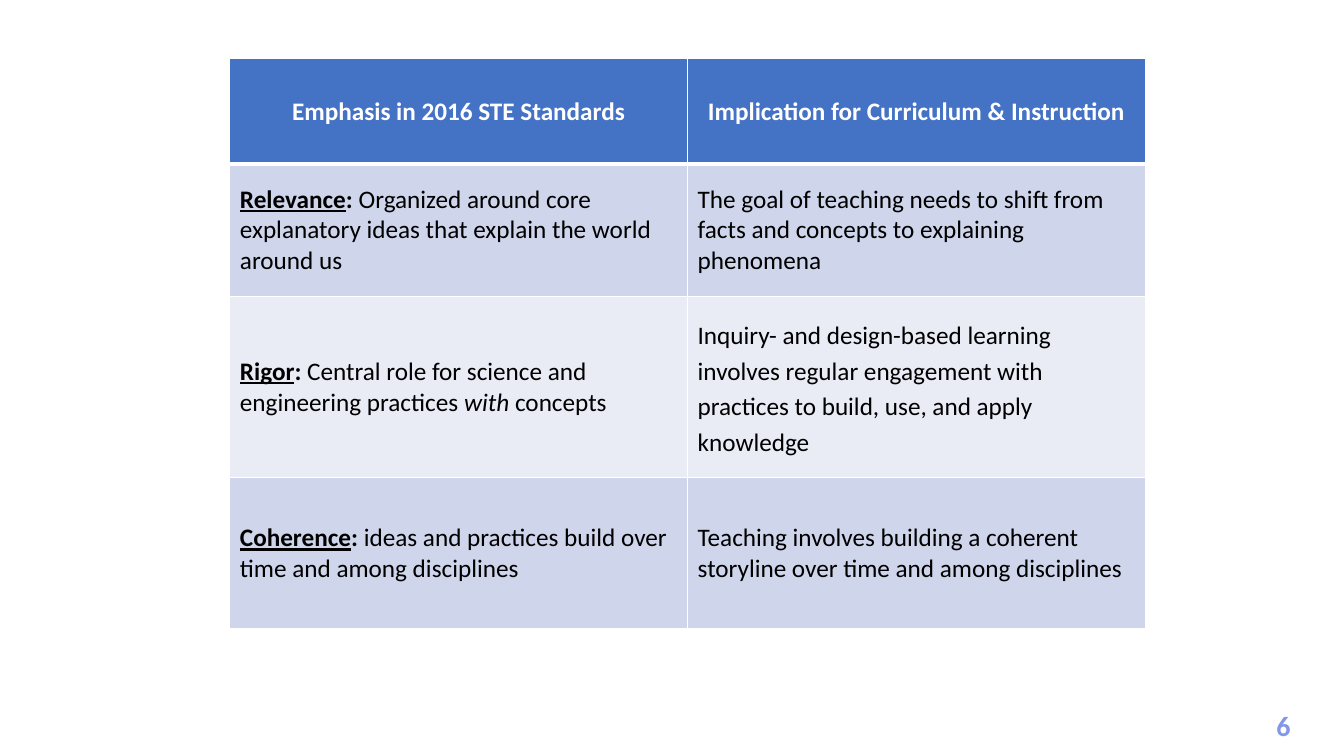
from dataclasses import dataclass

from lxml.etree import SubElement
from pptx import Presentation
from pptx.dml.color import RGBColor
from pptx.enum.text import MSO_ANCHOR, MSO_AUTO_SIZE, PP_ALIGN
from pptx.oxml.ns import qn
from pptx.util import Emu, Pt

EMU_PER_PX = 9144


@dataclass(frozen=True)
class Theme:
    font: str = "Calibri"
    table_size: int = 18
    number_size: int = 20
    white: str = "FFFFFF"
    black: str = "000000"
    header: str = "4472C4"
    bands: tuple = ("CFD5EA", "E9EBF5")
    number: str = "8397E7"
    rule: int = 1
    header_rule: int = 3


THEME = Theme()

COLUMN_WIDTHS = (454, 454)
ROW_HEIGHTS = (105, 131, 180, 150)
HEADINGS = ("Emphasis in 2016 STE Standards", "Implication for Curriculum & Instruction")
# Each row: key term, runs of (text, italic) that describe it, implication, line spacing
EMPHASES = (
    ("Relevance",
     (("Organized around core explanatory ideas that explain the world around us", False),),
     "The goal of teaching needs to shift from facts and concepts to explaining phenomena",
     None),
    ("Rigor",
     (("Central role for science and engineering practices ", False),
      ("with ", True), ("concepts", False)),
     "Inquiry- and design-based learning involves regular engagement with practices "
     "to build, use, and apply knowledge",
     1.15),
    ("Coherence",
     (("ideas and practices build over time and among disciplines", False),),
     "Teaching involves building a coherent storyline over time and among disciplines",
     None),
)


def px(length):
    return Emu(length * EMU_PER_PX)


def add_run(paragraph, text, color, size=THEME.table_size,
            bold=False, italic=False, underline=False):
    run = paragraph.add_run()
    run.text = text
    font = run.font
    font.name, font.size = THEME.font, Pt(size)
    font.bold, font.italic, font.underline = bold, italic, underline
    font.color.rgb = RGBColor.from_string(color)


def add_border(cell, side, width):
    properties = cell._tc.get_or_add_tcPr()
    line = SubElement(properties, qn(f"a:ln{side}"), w=str(Pt(width)))
    fill = SubElement(line, qn("a:solidFill"))
    SubElement(fill, qn("a:srgbClr"), val=THEME.white)


def style_cell(cell, row):
    """Give the cell its borders and fill; the rule under the header is heavier."""
    top = THEME.header_rule if row == 1 else THEME.rule
    bottom = THEME.header_rule if row == 0 else THEME.rule
    for side, width in (("L", THEME.rule), ("R", THEME.rule), ("T", top), ("B", bottom)):
        add_border(cell, side, width)
    color = THEME.header if row == 0 else THEME.bands[(row - 1) % 2]
    cell.fill.solid()
    cell.fill.fore_color.rgb = RGBColor.from_string(color)
    cell.vertical_anchor = MSO_ANCHOR.MIDDLE


def add_standards_table(slide, left, top):
    frame = slide.shapes.add_table(
        len(ROW_HEIGHTS), len(COLUMN_WIDTHS), px(left), px(top),
        px(sum(COLUMN_WIDTHS)), px(sum(ROW_HEIGHTS)))
    table = frame.table
    for column, width in zip(table.columns, COLUMN_WIDTHS):
        column.width = px(width)
    for index, (row, height) in enumerate(zip(table.rows, ROW_HEIGHTS)):
        row.height = px(height)
        for cell in row.cells:
            style_cell(cell, index)

    for column, heading in enumerate(HEADINGS):
        paragraph = table.cell(0, column).text_frame.paragraphs[0]
        paragraph.alignment = PP_ALIGN.CENTER
        add_run(paragraph, heading, THEME.white, bold=True)

    for row, (term, description, implication, spacing) in enumerate(EMPHASES, start=1):
        emphasis = table.cell(row, 0).text_frame.paragraphs[0]
        add_run(emphasis, term, THEME.black, bold=True, underline=True)
        add_run(emphasis, ": ", THEME.black, bold=True)
        for text, italic in description:
            add_run(emphasis, text, THEME.black, italic=italic)
        paragraph = table.cell(row, 1).text_frame.paragraphs[0]
        paragraph.line_spacing = spacing
        add_run(paragraph, implication, THEME.black)


def add_slide_number(slide, left, top, width, height):
    box = slide.shapes.add_textbox(px(left), px(top), px(width), px(height))
    text_frame = box.text_frame
    text_frame.word_wrap = True
    text_frame.auto_size = MSO_AUTO_SIZE.SHAPE_TO_FIT_TEXT
    paragraph = text_frame.paragraphs[0]
    paragraph.alignment = PP_ALIGN.CENTER
    add_run(paragraph, "6", THEME.number, THEME.number_size, bold=True)


def main():
    presentation = Presentation()
    presentation.slide_width, presentation.slide_height = px(1333), px(750)
    slide = presentation.slides.add_slide(presentation.slide_layouts[6])
    add_slide_number(slide, 1242, 698, 62, 44)
    add_standards_table(slide, 228, 58)
    presentation.save("out.pptx")


if __name__ == "__main__":
    main()
